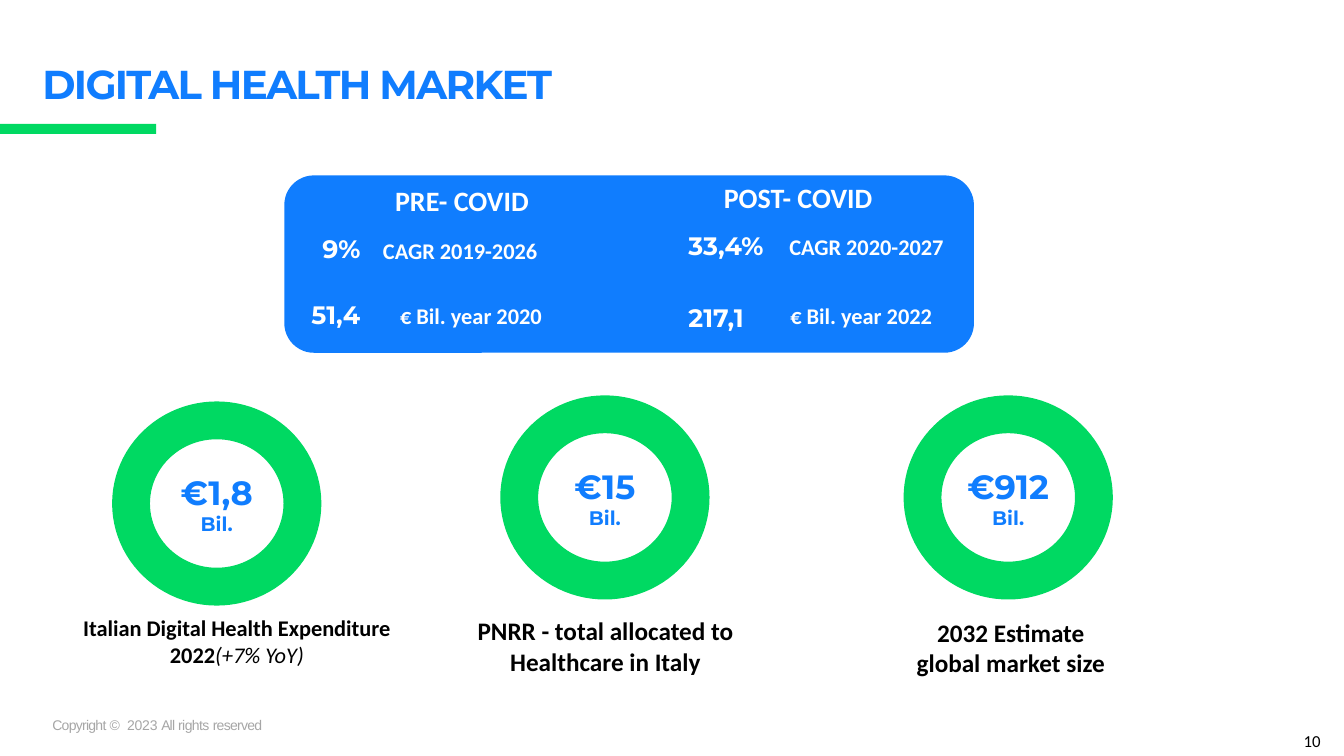
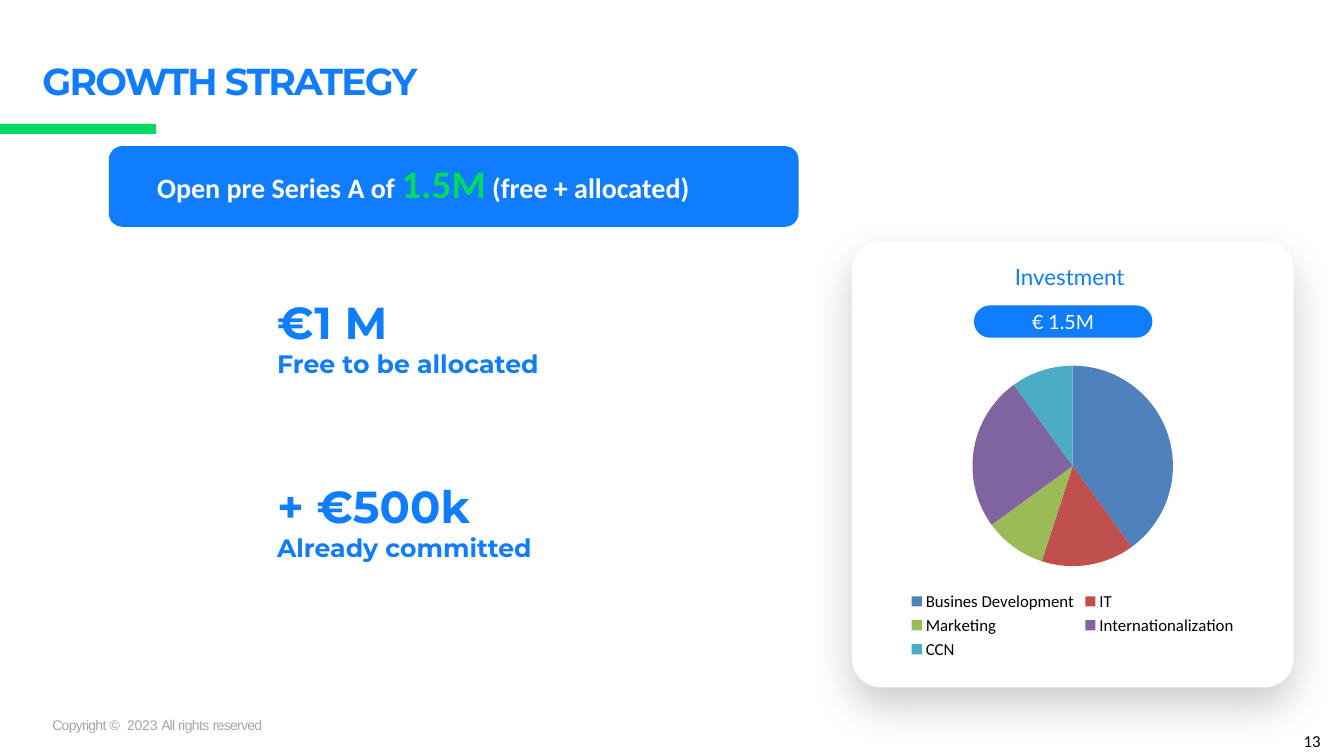
from dataclasses import dataclass

from lxml import etree
from pptx import Presentation
from pptx.chart.data import CategoryChartData
from pptx.dml.color import RGBColor
from pptx.enum.chart import XL_CHART_TYPE, XL_LEGEND_POSITION
from pptx.enum.shapes import MSO_SHAPE
from pptx.enum.text import MSO_ANCHOR, PP_ALIGN
from pptx.oxml.ns import qn
from pptx.util import Inches, Pt


@dataclass(frozen=True)
class Theme:
    blue: str = "107DFE"
    green: str = "00D962"
    white: str = "FFFFFF"
    black: str = "000000"
    grey: str = "A6A6A6"
    slices: tuple = ("4F81BD", "C0504D", "9BBB59", "8064A2", "4BACC6")
    display: str = "Montserrat"
    body: str = "Calibri"
    card: str = "Lato"
    footer: str = "Arial"
    hero: float = 32
    accent: float = 28
    ring: float = 24
    heading: float = 20
    figure: float = 18
    label: float = 16
    unit: float = 14
    small: float = 12
    tiny: float = 10


THEME = Theme()

# Text and letter spacing in points
COPYRIGHT = [("Copyright ", -0.5), ("© ", 1.2), ("2023 ", -0.1),
             ("All ", -0.6), ("rights ", -0.4), ("reserved", -0.5)]

# Heading box, then rows of (figure, its left and top, label, its left and top)
MARKET_PERIODS = [
    ("PRE- COVID", 3.82, 1.77, [
        ("9%", 3.1, 2.27, "CAGR 2019-2026", 3.7, 2.3),
        ("51,4", 2.99, 2.92, "€ Bil. year 2020", 3.87, 2.95)]),
    ("POST- COVID", 7.08, 1.74, [
        ("33,4%", 6.73, 2.24, "CAGR 2020-2027", 7.73, 2.26),
        ("217,1", 6.73, 2.95, "€ Bil. year 2022", 7.74, 2.95)]),
]

# Amount, ring left and top, caption runs (text, italic), caption box, caption size
MARKET_RINGS = [
    ("€1,8", 1.3, 4.17,
     [("Italian Digital Health Expenditure 2022", False), ("(+7% YoY)", True)],
     (0.31, 6.04, 4.08, 0.64), THEME.label),
    ("€15", 5.15, 4.11, [("PNRR - total allocated to Healthcare in Italy", False)],
     (4.51, 6.06, 2.99, 0.71), THEME.figure),
    ("€912", 9.15, 4.11, [("2032 Estimate global market size", False)],
     (8.88, 6.07, 2.29, 0.71), THEME.figure),
]

FUNDING = [("€1 M", "Free to be allocated", 2.87),
           ("+ €500k", "Already committed", 4.7)]

INVESTMENT = {"Busines Development": 40, "IT": 15, "Marketing": 10,
              "Internationalization": 25, "CCN": 10}


def rgb(color):
    return RGBColor.from_string(color)


def style(text, size, color, font=THEME.body, bold=False, italic=False, spacing=0):
    """Describe one run for write()."""
    return text, size, color, font, bold, italic, spacing


def write(shape, paragraphs, align=PP_ALIGN.LEFT, anchor=MSO_ANCHOR.TOP, insets=(0.1, 0.05)):
    """Fill a shape with paragraphs, each a list of styled runs."""
    frame = shape.text_frame
    frame.word_wrap = True
    frame.vertical_anchor = anchor
    frame.margin_left = frame.margin_right = Inches(insets[0])
    frame.margin_top = frame.margin_bottom = Inches(insets[1])
    for index, runs in enumerate(paragraphs):
        paragraph = frame.add_paragraph() if index else frame.paragraphs[0]
        paragraph.alignment = align
        for text, size, color, font, bold, italic, spacing in runs:
            run = paragraph.add_run()
            run.text = text
            run.font.size = Pt(size)
            run.font.name = font
            run.font.bold = bold
            run.font.italic = italic
            run.font.color.rgb = rgb(color)
            if spacing:
                run._r.get_or_add_rPr().set("spc", str(round(spacing * 100)))


def add_text(slide, box, paragraphs, **options):
    shape = slide.shapes.add_textbox(*map(Inches, box))
    write(shape, paragraphs, **options)
    return shape


def add_panel(slide, box, fill, kind=MSO_SHAPE.ROUNDED_RECTANGLE, radius=None):
    shape = slide.shapes.add_shape(kind, *map(Inches, box))
    shape.shadow.inherit = False
    shape.fill.solid()
    shape.fill.fore_color.rgb = rgb(fill)
    shape.line.fill.background()
    if radius is not None:
        shape.adjustments[0] = radius
    return shape


def add_soft_shadow(shape):
    effects = shape._element.spPr.find(qn("a:effectLst"))
    shadow = etree.SubElement(effects, qn("a:outerShdw"), blurRad=str(Pt(30)),
                              dist=str(Pt(13)), dir="5400000", algn="t", rotWithShape="0")
    color = etree.SubElement(shadow, qn("a:srgbClr"), val=THEME.black)
    etree.SubElement(color, qn("a:alpha"), val="20000")


def add_base_slide(presentation, title, title_size, number, line_spacing=1.0):
    """Add a slide with the shared title, green bar, footer and number."""
    slide = presentation.slides.add_slide(presentation.slide_layouts[6])
    add_text(slide, (0.47, 7.06, 6.57, 0.27),
             [[style(text, THEME.tiny, THEME.grey, THEME.footer, spacing=spacing)
               for text, spacing in COPYRIGHT]], insets=(0.05, 0.05))
    heading = add_text(slide, (0.42, 0.58, 11.41, 0.5),
                       [[style(title, title_size, THEME.blue, THEME.display, True, spacing=-1.2)]],
                       anchor=MSO_ANCHOR.MIDDLE, insets=(0, 0.04))
    heading.text_frame.paragraphs[0].line_spacing = line_spacing
    add_panel(slide, (0, 1.23, 1.55, 0.1), THEME.green, MSO_SHAPE.RECTANGLE)
    add_text(slide, (12.83, 7.2, 0.45, 0.3), [[style(number, THEME.small, THEME.black)]])
    return slide


def add_ring(slide, amount, left, top):
    ring = add_panel(slide, (left, top, 1.7, 1.65), THEME.white, MSO_SHAPE.OVAL)
    ring.line.color.rgb = rgb(THEME.green)
    ring.line.width = Pt(27)
    write(ring, [[style(amount, THEME.ring, THEME.blue, THEME.display, True)],
                 [style("Bil.", THEME.unit, THEME.blue, THEME.display, True)]],
          align=PP_ALIGN.CENTER, anchor=MSO_ANCHOR.MIDDLE)


def build_market(presentation):
    slide = add_base_slide(presentation, "DIGITAL HEALTH MARKET", 28.8, "10")
    add_panel(slide, (2.82, 1.74, 6.84, 1.76), THEME.blue)
    for heading, left, top, rows in MARKET_PERIODS:
        add_text(slide, (left, top, 1.75, 0.44),
                 [[style(heading, THEME.heading, THEME.white, bold=True)]])
        for figure, figure_left, figure_top, label, label_left, label_top in rows:
            add_text(slide, (figure_left, figure_top, 1.1, 0.4),
                     [[style(figure, THEME.figure, THEME.white, THEME.display, True)]])
            add_text(slide, (label_left, label_top, 2, 0.37),
                     [[style(label, THEME.label, THEME.white, bold=True)]])
    for amount, left, top, caption, caption_box, size in MARKET_RINGS:
        add_ring(slide, amount, left, top)
        add_text(slide, caption_box,
                 [[style(text, size, THEME.black, bold=not italic, italic=italic)
                   for text, italic in caption]], align=PP_ALIGN.CENTER)


def add_investment_chart(slide):
    data = CategoryChartData()
    data.categories = list(INVESTMENT)
    data.add_series("Series 1", list(INVESTMENT.values()))
    chart = slide.shapes.add_chart(XL_CHART_TYPE.PIE, Inches(8.86), Inches(3.49),
                                   Inches(3.56), Inches(3.09), data).chart
    chart.has_title = False
    chart.font.size = Pt(THEME.tiny)
    chart.font.name = THEME.body
    chart.font.color.rgb = rgb(THEME.black)
    chart.has_legend = True
    chart.legend.position = XL_LEGEND_POSITION.BOTTOM
    chart.legend.include_in_layout = False
    chart.legend.font.size = Pt(THEME.small)
    chart.legend.font.name = THEME.body
    chart.legend.font.color.rgb = rgb(THEME.black)
    plot = chart.plots[0]
    plot.vary_by_categories = True
    for index, color in enumerate(THEME.slices):
        fill = plot.series[0].points[index].format.fill
        fill.solid()
        fill.fore_color.rgb = rgb(color)


def build_growth(presentation):
    slide = add_base_slide(presentation, "GROWTH STRATEGY", 26.8, "13", line_spacing=0.9)
    add_panel(slide, (1.08, 1.45, 6.84, 0.8), THEME.blue)
    add_text(slide, (1.46, 1.53, 6.46, 0.57), [[
        style("Open pre Series A of ", THEME.heading, THEME.white, bold=True),
        style("1.5M", THEME.accent, THEME.green, bold=True),
        style(" (free + allocated)", THEME.heading, THEME.white, bold=True)]])
    for amount, label, top in FUNDING:
        add_text(slide, (2.65, top, 3.11, 0.94),
                 [[style(amount, THEME.hero, THEME.blue, THEME.display, True)],
                  [style(label, THEME.figure, THEME.blue, THEME.display, True)]])
    add_soft_shadow(add_panel(slide, (8.45, 2.39, 4.38, 4.43), THEME.white, radius=0.066))
    add_investment_chart(slide)
    add_text(slide, (9.66, 2.56, 1.9, 0.37),
             [[style("Investment", THEME.label, THEME.blue, THEME.card)]],
             align=PP_ALIGN.CENTER)
    total = add_panel(slide, (9.66, 3.03, 1.77, 0.32), THEME.blue, radius=0.5)
    write(total, [[style("€ 1.5M", THEME.unit, THEME.white, THEME.card)]],
          align=PP_ALIGN.CENTER, anchor=MSO_ANCHOR.MIDDLE, insets=(0, 0.05))


def main():
    presentation = Presentation()
    presentation.slide_width = Inches(13.33)
    presentation.slide_height = Inches(7.5)
    build_market(presentation)
    build_growth(presentation)
    presentation.save("out.pptx")


if __name__ == "__main__":
    main()
